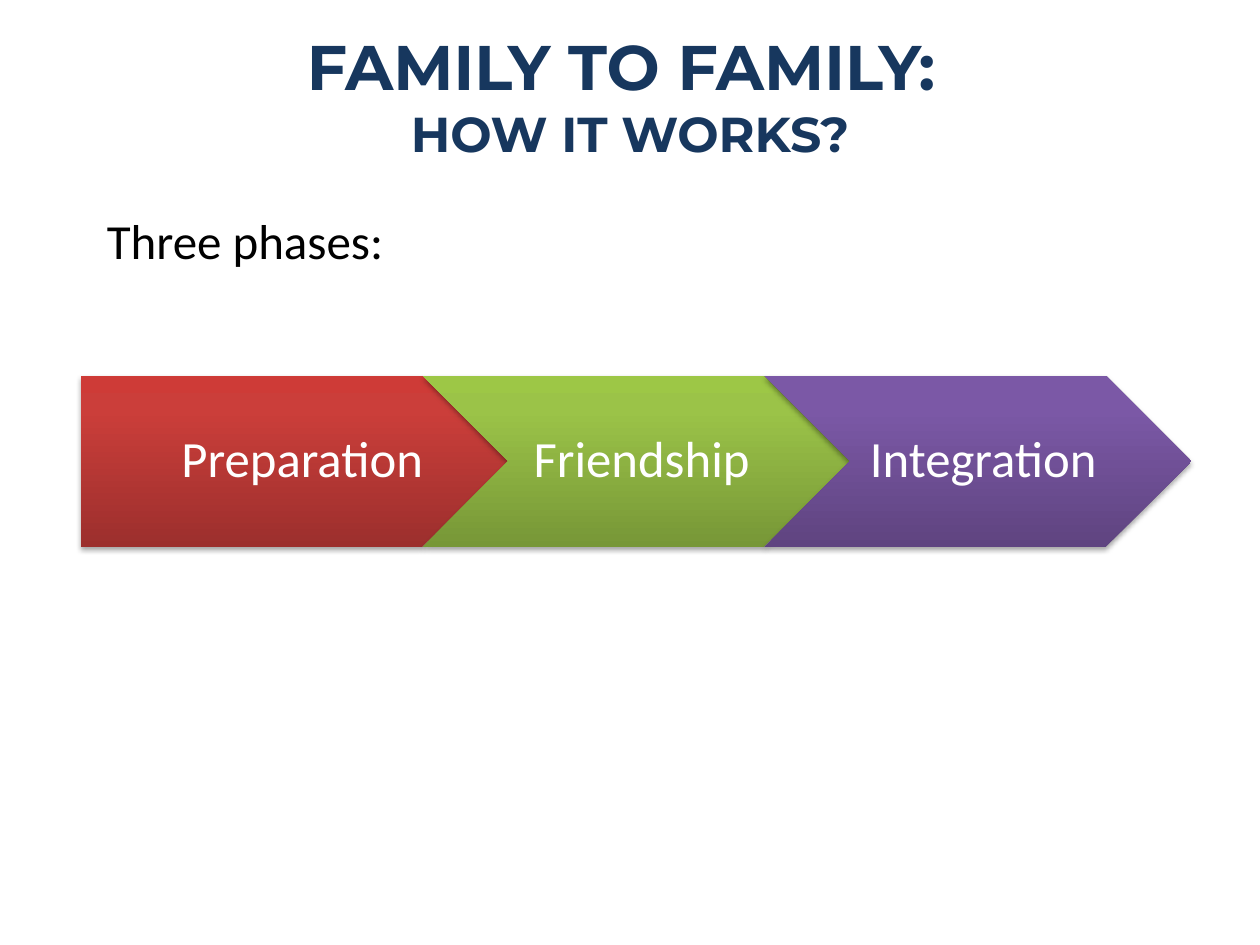
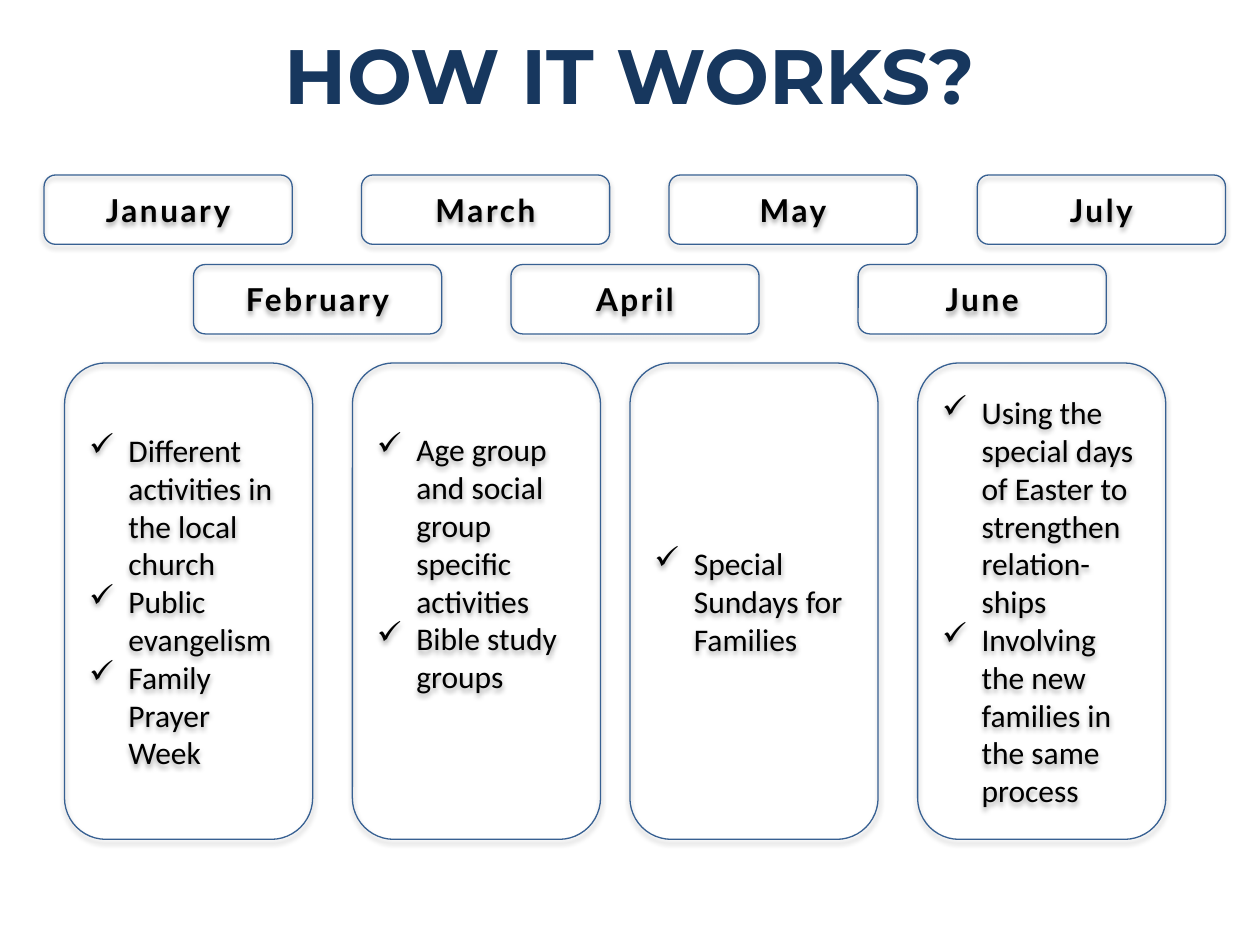
from copy import deepcopy

from lxml import etree
from pptx import Presentation
from pptx.dml.color import RGBColor
from pptx.enum import shapes, text
from pptx.oxml import ns
from pptx.util import Pt

NAVY = RGBColor(0x17, 0x37, 0x5E)
EDGE = RGBColor(0x37, 0x60, 0x92)
HALO = RGBColor(0xFC, 0xFC, 0xFD)
BLACK = RGBColor(0, 0, 0)
WHITE = RGBColor(0xFF, 0xFF, 0xFF)
RED = [RGBColor(0x9C, 0x2F, 0x2D), RGBColor(0xCB, 0x3E, 0x3A), RGBColor(0xCE, 0x3B, 0x37)]
GREEN = [RGBColor(0x77, 0x97, 0x37), RGBColor(0x9B, 0xC3, 0x48), RGBColor(0x9D, 0xC7, 0x46)]
PURPLE = [RGBColor(0x5F, 0x44, 0x80), RGBColor(0x7B, 0x58, 0xA6), RGBColor(0x7C, 0x57, 0xA8)]
STOPS = (0, 0.8, 1)
CENTER = text.PP_ALIGN.CENTER
LEFT = text.PP_ALIGN.LEFT
MIDDLE = text.MSO_ANCHOR.MIDDLE
SHAPE = shapes.MSO_SHAPE


def child(parent, tag, **attrs):
    """Append a DrawingML element to parent and return it."""
    return etree.SubElement(parent, ns.qn(tag), {k: str(v) for k, v in attrs.items()})


def write(tf, s, size=18, font="Calibri", color=BLACK, bold=False, align=LEFT,
          spacing=None, tracking=0, halo=None, bullet=None, indent=22.5):
    """Write one paragraph into a text frame with the given format."""
    p = tf.paragraphs[0] if not tf.paragraphs[0].runs else tf.add_paragraph()
    p.alignment = align
    if spacing:
        p.line_spacing = spacing
    if bullet:
        pPr = p._p.get_or_add_pPr()
        pPr.set("marL", str(Pt(indent)))
        pPr.set("indent", str(-Pt(indent)))
        child(pPr, "a:buChar", char=bullet)
    r = p.add_run()
    r.text = s
    r.font.size, r.font.name, r.font.bold = Pt(size), font, bold
    r.font.color.rgb = color
    rPr = r._r.get_or_add_rPr()
    if tracking:
        rPr.set("spc", str(int(tracking * 100)))
    if halo:
        ln = child(rPr, "a:ln", w=Pt(1.4))
        child(child(ln, "a:solidFill"), "a:srgbClr", val=halo)
        rPr.insert(0, ln)


class Deck:
    """Holds the presentation style and the current slide."""

    def __init__(self):
        """Start an empty 4:3 presentation."""
        self.prs = Presentation()
        self.prs.slide_width, self.prs.slide_height = Pt(720), Pt(540)

    def slide(self, *title):
        """Add a blank slide with title lines given as (text, size) pairs."""
        self.s = self.prs.slides.add_slide(self.prs.slide_layouts[6])
        tf = self.box(0, 12.24, 720, 72.72)
        for line, size in title:
            write(tf, line, size=size, font="Montserrat", color=NAVY, bold=True,
                  align=CENTER, halo=HALO)

    def box(self, x, y, w, h):
        """Add a wrapping text box and return its text frame."""
        tf = self.s.shapes.add_textbox(Pt(x), Pt(y), Pt(w), Pt(h)).text_frame
        tf.word_wrap = True
        return tf

    def shape(self, kind, x, y, w, h):
        """Add a preset shape with the common soft shadow."""
        sp = self.s.shapes.add_shape(kind, Pt(x), Pt(y), Pt(w), Pt(h))
        sp.shadow.inherit = False
        effects = sp._element.spPr.find(ns.qn("a:effectLst"))
        shadow = child(effects, "a:outerShdw", blurRad=Pt(3.1), dist=Pt(1.8),
                       dir=5400000, rotWithShape=0)
        child(child(shadow, "a:srgbClr", val=BLACK), "a:alpha", val=35000)
        sp.text_frame.vertical_anchor = MIDDLE
        return sp

    def phase(self, kind, x, label, colors, inset):
        """Add one gradient arrow of the phase band."""
        sp = self.shape(kind, x, 214.6, 244, 97.9)
        sp.line.fill.background()
        sp.fill.gradient()
        sp.fill.gradient_angle = 90
        stops = sp._element.spPr.find(".//" + ns.qn("a:gsLst"))
        stops.append(deepcopy(stops[-1]))
        for stop, position, color in zip(sp.fill.gradient_stops, STOPS, colors):
            stop.position, stop.color.rgb = position, color
        tf = sp.text_frame
        tf.word_wrap = False
        tf.margin_left, tf.margin_right = Pt(inset), Pt(3)
        tf.margin_top = tf.margin_bottom = Pt(5.8)
        write(tf, label, size=29, color=WHITE, align=CENTER, spacing=0.9)

    def frame(self, x, y, h):
        """Add an outlined rounded frame and return its text frame."""
        sp = self.shape(SHAPE.ROUNDED_RECTANGLE, x, y, 141.8, h)
        sp.fill.background()
        sp.line.color.rgb, sp.line.width = EDGE, Pt(0.75)
        sp.text_frame.word_wrap = True
        return sp.text_frame

    def month(self, x, y, name):
        """Add a month label."""
        write(self.frame(x, y, 39.6), name, font="Lato", bold=True,
              align=CENTER, tracking=1.5)

    def card(self, x, items, bottom=3.6):
        """Add a card with a list of ticked items."""
        tf = self.frame(x, 207.4, 272.2)
        tf.margin_bottom = Pt(bottom)
        for item in items:
            write(tf, item, bullet="✓")


def main():
    """Build both slides and save them."""
    d = Deck()

    d.slide(("FAMILY TO FAMILY: ", 36), ("HOW IT WORKS?", 28))
    write(d.box(54, 116.6, 226.8, 41), "Three phases:", size=28)
    phases = [(SHAPE.PENTAGON, "Preparation", RED, 36.7),
              (SHAPE.CHEVRON, "Friendship", GREEN, 9.4),
              (SHAPE.CHEVRON, "Integration", PURPLE, 9.4)]
    for i, (kind, label, colors, inset) in enumerate(phases):
        d.phase(kind, 46.2 + 195.3 * i, label, colors, inset)

    d.slide(("HOW IT WORKS?", 44))
    rows = [(100, [(25.2, "January"), (206.6, "March"), (382.3, "May"), (558.5, "July")]),
            (151.2, [(110.6, "February"), (292, "April"), (490.4, "June")])]
    for y, months in rows:
        for x, name in months:
            d.month(x, y, name)
    d.card(36.9, ["Different activities in the local church",
                  "Public evangelism", "Family Prayer Week"])
    d.card(201.4, ["Age group and social group specific activities",
                   "Bible study groups"], bottom=47.5)
    d.card(360, ["Special Sundays for Families"])
    d.card(524.4, ["Using the special days of Easter to strengthen relation-ships",
                   "Involving the new families in the same process"])

    d.prs.save("out.pptx")


if __name__ == "__main__":
    main()
